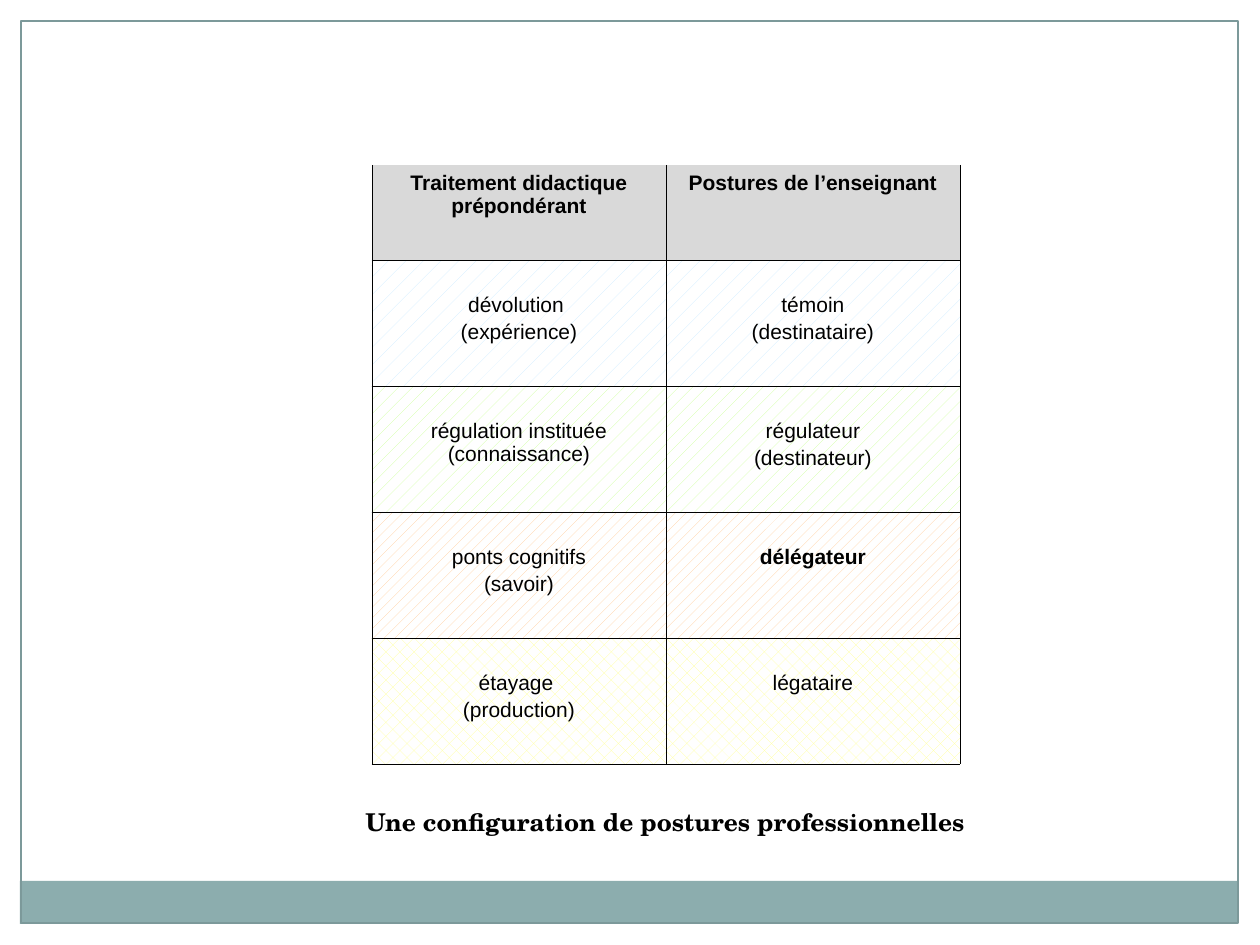
"""Build a slide with a grid of teaching postures and its caption."""
import lxml.etree
import pptx
import pptx.dml.color
import pptx.enum.dml
import pptx.enum.shapes
import pptx.enum.text
import pptx.oxml.ns
import pptx.util

PX = 914400 // 126
PATTERN = pptx.enum.dml.MSO_PATTERN_TYPE
GRID_LEFT, HEADER_TOP, GRID_TOP = 372, 165, 260
COLUMN, HEADER_HEIGHT, ROW = 294, 100, 126
INSET, BODY_INSET = 6, 33

HEADERS = ["Traitement didactique prépondérant", "Postures de l’enseignant"]
ROWS = [
    (PATTERN.PERCENT_5, "CCECFF", ["dévolution ", "(expérience)"], ["témoin", "(destinataire)"]),
    (PATTERN.PERCENT_10, "CCFF99", ["régulation instituée (connaissance)"],
     ["régulateur", "(destinateur)"]),
    (PATTERN.PERCENT_20, "FFCC99", ["ponts cognitifs", "(savoir)"], ["délégateur"]),
    (PATTERN.PERCENT_25, "FFFF99", ["étayage ", "(production)"], ["légataire"]),
]


def px(*lengths):
    return [pptx.util.Emu(length * PX) for length in lengths]


def color(value):
    return pptx.dml.color.RGBColor.from_string(value)


def write(frame, lines, font="Arial", size=12, bold=False, align="CENTER", ink="000000"):
    for index, line in enumerate(lines):
        paragraph = frame.add_paragraph() if index else frame.paragraphs[0]
        paragraph.alignment = getattr(pptx.enum.text.PP_ALIGN, align)
        paragraph.space_before = pptx.util.Pt(0.2 * size if index else 0)
        run = paragraph.add_run()
        run.text = line
        run.font.name = font
        run.font.size = pptx.util.Pt(size)
        run.font.bold = bold
        run.font.color.rgb = color(ink)


class SlideBuilder:
    def __init__(self, slide, border="000000", border_width=0.5):
        self.slide = slide
        self.border = border
        self.border_width = border_width

    def rectangle(self, *box, fill=None, line=None):
        kind = pptx.enum.shapes.MSO_SHAPE.RECTANGLE
        shape = self.slide.shapes.add_shape(kind, *px(*box))
        shape.shadow.inherit = False
        if fill:
            shape.fill.solid()
            shape.fill.fore_color.rgb = color(fill)
        else:
            shape.fill.background()
        if line:
            shape.line.color.rgb = color(line)
            shape.line.width = pptx.util.Pt(0.75)
        else:
            shape.line.fill.background()

    def table(self, left, top, height, cells, inset, fill, pattern=None, sides="LRTB", bold=False):
        frame = self.slide.shapes.add_table(
            1, len(cells), *px(left, top, COLUMN * len(cells), height))
        table = frame.table
        table.first_row = table.horz_banding = False
        for cell, lines in zip(table.rows[0].cells, cells):
            cell.margin_top, cell.margin_bottom = px(inset, INSET)
            write(cell.text_frame, lines, bold=bold)
            if pattern is None:
                cell.fill.solid()
            else:
                cell.fill.patterned()
                cell.fill.pattern = pattern
                cell.fill.back_color.rgb = color("FFFFFF")
            cell.fill.fore_color.rgb = color(fill)
            self.borders(cell, sides)

    def borders(self, cell, sides):
        qn = pptx.oxml.ns.qn
        properties = cell._tc.get_or_add_tcPr()
        for index, side in enumerate("LRTB"):
            line = lxml.etree.Element(qn(f"a:ln{side}"))
            if side in sides:
                line.set("w", str(int(pptx.util.Pt(self.border_width))))
                fill = lxml.etree.SubElement(line, qn("a:solidFill"))
                lxml.etree.SubElement(fill, qn("a:srgbClr"), val=self.border)
            else:
                lxml.etree.SubElement(line, qn("a:noFill"))
            properties.insert(index, line)

    def text(self, *box, lines, **style):
        frame = self.slide.shapes.add_textbox(*px(*box)).text_frame
        frame.word_wrap = True
        frame.auto_size = pptx.enum.text.MSO_AUTO_SIZE.SHAPE_TO_FIT_TEXT
        write(frame, lines, **style)


def main():
    presentation = pptx.Presentation()
    presentation.slide_width = pptx.util.Inches(10)
    presentation.slide_height = pptx.util.Inches(7.5)
    builder = SlideBuilder(presentation.slides.add_slide(presentation.slide_layouts[6]))

    builder.rectangle(20, 881, 1217, 43, fill="8CADAE")
    builder.rectangle(21, 21, 1217, 902, line="7C999A")

    builder.table(GRID_LEFT, HEADER_TOP, HEADER_HEIGHT, [[header] for header in HEADERS],
                  INSET, "D9D9D9", sides="LRB", bold=True)
    for row, (pattern, fill, *cells) in enumerate(ROWS):
        for column, lines in enumerate(cells):
            builder.table(GRID_LEFT + column * COLUMN, GRID_TOP + row * ROW, ROW, [lines],
                          BODY_INSET, fill, pattern, bold=lines == ["délégateur"])

    builder.text(353, 801, 635, 43, lines=["Une configuration de postures professionnelles"],
                 font="TeX Gyre Schola", size=14, bold=True, align="LEFT")
    presentation.save("out.pptx")


if __name__ == "__main__":
    main()
